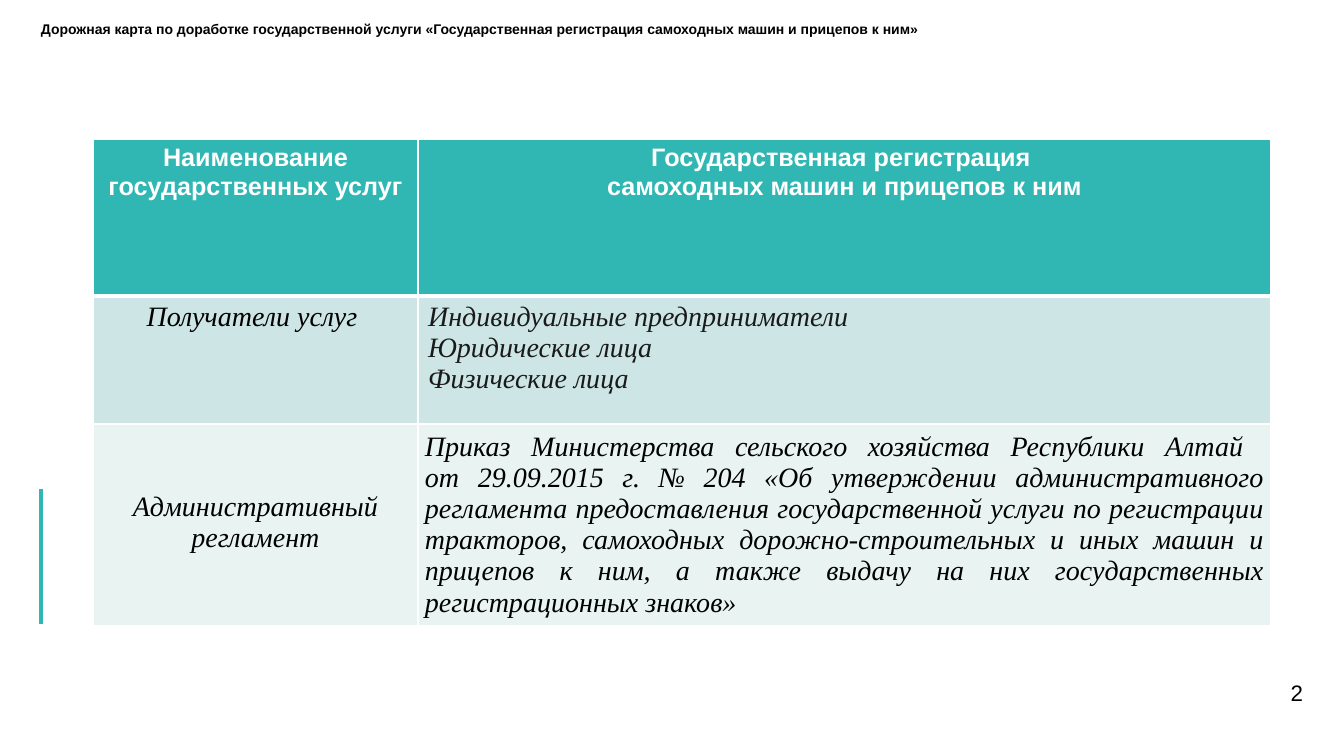
from lxml import etree
from pptx import Presentation
from pptx import util as u
from pptx.dml.color import RGBColor
from pptx.enum import shapes, text
from pptx.oxml.ns import qn

SCALE = 914400 / 100.8
LEFT, MID, RIGHT, JUST = (text.PP_ALIGN.LEFT, text.PP_ALIGN.CENTER,
                          text.PP_ALIGN.RIGHT, text.PP_ALIGN.JUSTIFY)


def px(n):
    return u.Emu(round(n * SCALE))


def color(code):
    return RGBColor.from_string(code)


class Deck:
    teal, white, black = "30B6B3", "FFFFFF", "000000"
    title = dict(name="Arial", size=u.Pt(10), bold=True)
    page = dict(name="Arial", size=u.Pt(16))
    head = dict(name="Arial", size=u.Pt(18), bold=True)
    body = dict(name="Times New Roman", size=u.Pt(20), bold=False, italic=True)

    def __init__(self):
        self.show = Presentation()
        self.show.slide_width, self.show.slide_height = px(1344), px(756)
        self.slide = self.show.slides.add_slide(self.show.slide_layouts[6])

    def put(self, frame, lines, font, ink, align):
        frame.word_wrap = True
        for i, line in enumerate(lines):
            para = frame.paragraphs[0] if i == 0 else frame.add_paragraph()
            para.text = line
            para.alignment = align
            for run in para.runs:
                for key, value in font.items():
                    setattr(run.font, key, value)
                run.font.color.rgb = color(ink)

    def label(self, box, line, font, align=LEFT, anchor=text.MSO_ANCHOR.TOP, gap=1.0):
        frame = self.slide.shapes.add_textbox(*map(px, box)).text_frame
        for side in ("left", "top", "right", "bottom"):
            setattr(frame, "margin_" + side, 0)
        frame.vertical_anchor = anchor
        self.put(frame, [line], font, self.black, align)
        frame.paragraphs[0].line_spacing = gap

    def rule(self, x, top, end):
        line = self.slide.shapes.add_connector(
            shapes.MSO_CONNECTOR.STRAIGHT, px(x), px(top), px(x), px(end))
        line.line.color.rgb = color(self.teal)
        line.line.width = u.Pt(2.25)
        etree.SubElement(line._element.spPr, qn("a:effectLst"))

    def edge(self, cell, widths):
        props = cell._tc.get_or_add_tcPr()
        for side, width in widths.items():
            line = etree.SubElement(props, qn("a:ln" + side), w=str(u.Pt(width)))
            fill = etree.SubElement(line, qn("a:solidFill"))
            etree.SubElement(fill, qn("a:srgbClr"), val=self.white)

    def table(self, x, y, cols, rows, cells, fills):
        grid = self.slide.shapes.add_table(
            len(rows), len(cols), px(x), px(y), px(sum(cols)), px(sum(rows))).table
        for col, width in zip(grid.columns, cols):
            col.width = px(width)
        for r, (height, row, fill) in enumerate(zip(rows, cells, fills)):
            grid.rows[r].height = px(height)
            for c, (lines, align, ink, extra) in enumerate(row):
                cell = grid.cell(r, c)
                self.edge(cell, dict(L=1, R=1, T=3 if r == 1 else 1, B=3 if r == 0 else 1))
                cell.fill.solid()
                cell.fill.fore_color.rgb = color(fill)
                font = self.head if r == 0 else self.body
                self.put(cell.text_frame, lines, font, ink, align)
                for key, value in extra.items():
                    setattr(cell, key, value)


def main():
    deck = Deck()
    deck.label((41, 22, 1114, 39), "Дорожная карта по доработке государственной услуги "
               "«Государственная регистрация самоходных машин и прицепов к ним»",
               deck.title, gap=0.9)
    deck.label((1196, 671, 107, 43), "2", deck.page, RIGHT, text.MSO_ANCHOR.MIDDLE)
    deck.rule(41, 489, 624)
    order = ("Приказ Министерства сельского хозяйства Республики Алтай \v"
             "от 29.09.2015 г. № 204 «Об утверждении административного регламента "
             "предоставления государственной услуги по регистрации тракторов, "
             "самоходных дорожно-строительных и иных машин и прицепов к ним, "
             "а также выдачу на них государственных регистрационных знаков»")
    tight = dict(margin_left=px(7), margin_right=px(7), margin_top=0, margin_bottom=0,
                 vertical_anchor=text.MSO_ANCHOR.MIDDLE)
    cells = [
        [(["Наименование государственных услуг"], MID, deck.white, {}),
         (["Государственная регистрация ", "самоходных машин и прицепов к ним"],
          MID, deck.white, {})],
        [(["Получатели услуг "], MID, deck.black, {}),
         (["Индивидуальные предприниматели", "Юридические лица", "Физические лица"],
          LEFT, "1A1A1A", {})],
        [(["Административный регламент"], MID, deck.black, dict(margin_top=px(67))),
         ([order], JUST, deck.black, tight)],
    ]
    deck.table(93, 139, (325, 853), (157, 128, 189), cells,
               (deck.teal, "CDE5E5", "E8F3F2"))
    deck.show.save("out.pptx")


if __name__ == "__main__":
    main()
